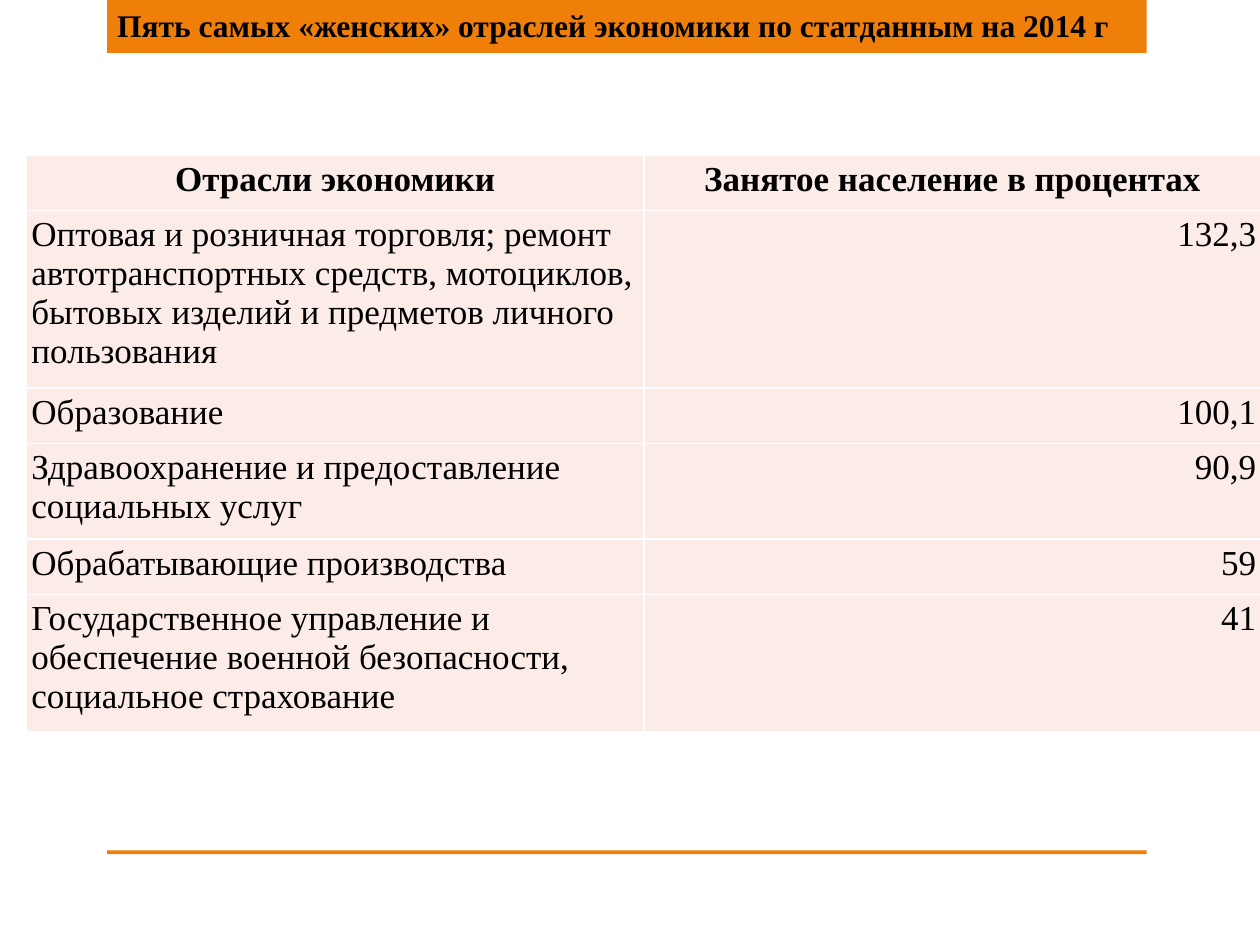
from dataclasses import dataclass

from lxml import etree
from pptx import Presentation
from pptx.dml.color import RGBColor
from pptx.enum.shapes import MSO_SHAPE
from pptx.enum.text import MSO_ANCHOR, PP_ALIGN
from pptx.oxml.ns import qn
from pptx.util import Inches, Pt

RECTANGLE = MSO_SHAPE.RECTANGLE
TOP, MIDDLE = MSO_ANCHOR.TOP, MSO_ANCHOR.MIDDLE
LEFT, CENTER, RIGHT = PP_ALIGN.LEFT, PP_ALIGN.CENTER, PP_ALIGN.RIGHT
TITLE_ONLY = 5


@dataclass(frozen=True)
class Theme:
    font: str = "Times New Roman"
    title_size: int = 18
    table_size: int = 20
    text: str = "000000"
    accent: str = "F07F09"
    cell: str = "FCECE7"
    border: str = "FFFFFF"


THEME = Theme()
TITLE = "Пять самых «женских» отраслей экономики по статданным на 2014 г"
HEADER = ("Отрасли экономики", "Занятое население в процентах")
INDUSTRIES = [
    ("Оптовая и розничная торговля; ремонт автотранспортных средств, "
     "мотоциклов, бытовых изделий и предметов личного пользования", "132,3"),
    ("Образование", "100,1"),
    ("Здравоохранение и предоставление социальных услуг", "90,9"),
    ("Обрабатывающие производства", "59"),
    ("Государственное управление и обеспечение военной безопасности, "
     "социальное страхование", "41"),
]
ROW_HEIGHTS = (0.44, 1.41, 0.44, 0.76, 0.44, 1.09)
COLUMN_WIDTH = 4.9


def write(frame, text, size, align, bold=False):
    paragraph = frame.paragraphs[0]
    paragraph.text = text
    paragraph.alignment = align
    font = paragraph.font
    font.name = THEME.font
    font.size = Pt(size)
    font.bold = bold
    font.color.rgb = RGBColor.from_string(THEME.text)


def add_bar(slide, top, height):
    bar = slide.shapes.add_shape(
        RECTANGLE, Inches(0.85), Inches(top), Inches(8.25), Inches(height))
    bar.shadow.inherit = False
    bar.fill.solid()
    bar.fill.fore_color.rgb = RGBColor.from_string(THEME.accent)
    bar.line.fill.background()


def place_title(slide):
    """Put the title placeholder over the top bar."""
    title = slide.shapes.title
    title.left, title.top = Inches(0.83), Inches(0)
    title.width, title.height = Inches(8.98), Inches(0.4)
    frame = title.text_frame
    frame.word_wrap = True
    frame.vertical_anchor = MIDDLE
    write(frame, TITLE, THEME.title_size, LEFT, bold=True)
    slide.shapes._spTree.append(title._element)


def add_borders(cell):
    properties = cell._tc.get_or_add_tcPr()
    for position, side in enumerate(("a:lnL", "a:lnR", "a:lnT", "a:lnB")):
        border = etree.Element(qn(side), w=str(Pt(1)))
        fill = etree.SubElement(border, qn("a:solidFill"))
        etree.SubElement(fill, qn("a:srgbClr"), val=THEME.border)
        properties.insert(position, border)


def format_cell(cell, text, align, bold):
    cell.margin_left = cell.margin_right = Inches(0.04)
    cell.margin_top = cell.margin_bottom = Inches(0.04)
    cell.vertical_anchor = TOP
    cell.fill.solid()
    cell.fill.fore_color.rgb = RGBColor.from_string(THEME.cell)
    add_borders(cell)
    write(cell.text_frame, text, THEME.table_size, align, bold)


def add_industry_table(slide):
    rows = [HEADER, *INDUSTRIES]
    table = slide.shapes.add_table(
        len(rows), len(HEADER), Inches(0.21), Inches(1.23),
        Inches(COLUMN_WIDTH * len(HEADER)), Inches(sum(ROW_HEIGHTS))).table
    for column in table.columns:
        column.width = Inches(COLUMN_WIDTH)
    for row, height in zip(table.rows, ROW_HEIGHTS):
        row.height = Inches(height)
    for row_index, values in enumerate(rows):
        is_header = row_index == 0
        alignments = (CENTER, CENTER) if is_header else (LEFT, RIGHT)
        for column_index, (value, align) in enumerate(zip(values, alignments)):
            format_cell(table.cell(row_index, column_index), value, align, is_header)


def main():
    presentation = Presentation()
    presentation.slide_width = Inches(10)
    presentation.slide_height = Inches(7.5)
    slide = presentation.slides.add_slide(presentation.slide_layouts[TITLE_ONLY])
    add_bar(slide, top=0, height=0.42)
    add_bar(slide, top=6.75, height=0.03)
    place_title(slide)
    add_industry_table(slide)
    presentation.save("out.pptx")


if __name__ == "__main__":
    main()
